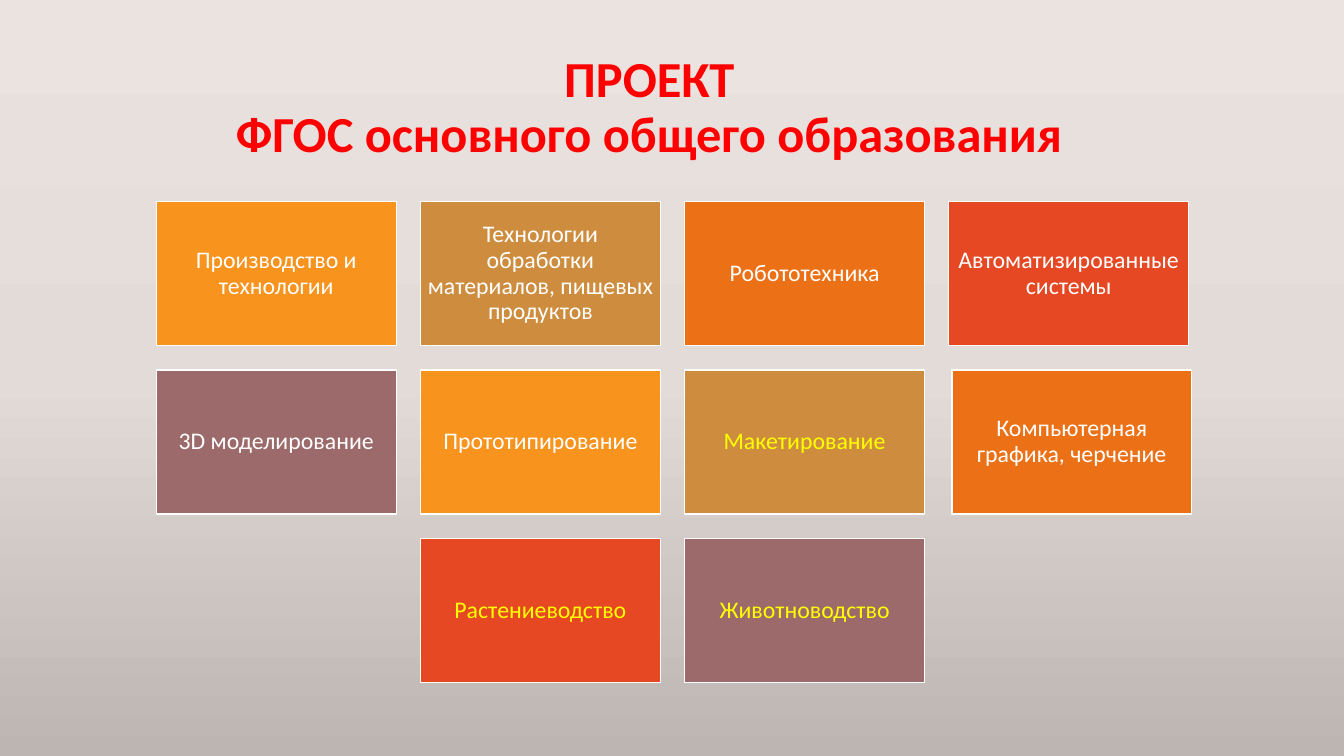
import copy

import pptx
import pptx.dml.color
import pptx.enum.shapes
import pptx.enum.text
import pptx.oxml.ns
import pptx.util

Inches = pptx.util.Inches
RGBColor = pptx.dml.color.RGBColor

WHITE = RGBColor(0xFF, 0xFF, 0xFF)
YELLOW = RGBColor(0xFF, 0xFF, 0x00)
RED = RGBColor(0xFF, 0x00, 0x00)
BACKDROP = [
    (0, RGBColor(0xEB, 0xE3, 0xDF)),
    (0.5, RGBColor(0xE2, 0xDB, 0xD8)),
    (1, RGBColor(0xBC, 0xB5, 0xB2)),
]
TILE_FILLS = [
    RGBColor(0xF8, 0x93, 0x1D),
    RGBColor(0xCE, 0x8D, 0x3E),
    RGBColor(0xEC, 0x70, 0x16),
    RGBColor(0xE6, 0x48, 0x23),
    RGBColor(0x9C, 0x6A, 0x6A),
]

# Subject, column, row, text colour
SUBJECTS = [
    ("Производство и технологии", 0, 0, WHITE),
    ("Технологии обработки материалов, пищевых продуктов", 1, 0, WHITE),
    ("Робототехника", 2, 0, WHITE),
    ("Автоматизированные системы", 3, 0, WHITE),
    ("3D моделирование", 0, 1, WHITE),
    ("Прототипирование", 1, 1, WHITE),
    ("Макетирование", 2, 1, YELLOW),
    ("Компьютерная графика, черчение", 3, 1, WHITE),
    ("Растениеводство", 1, 2, YELLOW),
    ("Животноводство", 2, 2, YELLOW),
]
GRID_LEFT, GRID_TOP = 1.55, 2
TILE_WIDTH, TILE_HEIGHT = 2.38, 1.43
TILE_GAP = 0.24
GRAPHICS_SHIFT = 0.03  # the computer graphics tile stands slightly right


class SubjectSlide:
    font_name = "Calibri"

    def __init__(self, slide):
        self.slide = slide

    def background(self, stops):
        fill = self.slide.background.fill
        fill.gradient()
        fill.gradient_angle = 270
        stop_list = next(self.slide.element.iter(pptx.oxml.ns.qn("a:gsLst")))
        stop_list.append(copy.deepcopy(stop_list[0]))
        for stop, (position, color) in zip(fill.gradient_stops, stops):
            stop.position = position
            stop.color.rgb = color

    def set_text(self, frame, text, size, color, bold=False):
        frame.word_wrap = True
        frame.auto_size = pptx.enum.text.MSO_AUTO_SIZE.NONE
        frame.vertical_anchor = pptx.enum.text.MSO_ANCHOR.MIDDLE
        paragraph = frame.paragraphs[0]
        paragraph.text = text
        paragraph.alignment = pptx.enum.text.PP_ALIGN.CENTER
        paragraph.line_spacing = 0.9
        paragraph.font.name = self.font_name
        paragraph.font.size = pptx.util.Pt(size)
        paragraph.font.bold = bold
        paragraph.font.color.rgb = color

    def title(self, text, left, top, width, height):
        heading = self.slide.shapes.title
        heading.left, heading.top = Inches(left), Inches(top)
        heading.width, heading.height = Inches(width), Inches(height)
        self.set_text(heading.text_frame, text, 36, RED, bold=True)

    def tile(self, text, left, top, fill, color):
        tile = self.slide.shapes.add_shape(
            pptx.enum.shapes.MSO_SHAPE.RECTANGLE,
            Inches(left), Inches(top), Inches(TILE_WIDTH), Inches(TILE_HEIGHT),
        )
        tile.shadow.inherit = False
        tile.fill.solid()
        tile.fill.fore_color.rgb = fill
        tile.line.color.rgb = WHITE
        tile.line.width = pptx.util.Pt(1)
        frame = tile.text_frame
        frame.margin_left = frame.margin_right = Inches(0.07)
        frame.margin_top = frame.margin_bottom = Inches(0.07)
        self.set_text(frame, text, 17, color)


def main():
    presentation = pptx.Presentation()
    presentation.slide_width = Inches(13.33)
    presentation.slide_height = Inches(7.5)
    title_only = presentation.slide_layouts[5]
    page = SubjectSlide(presentation.slides.add_slide(title_only))

    # Background and title
    page.background(BACKDROP)
    page.title("ПРОЕКТ\vФГОС основного общего образования", 0.69, 0.4, 11.5, 1.36)

    # Subject tiles, with the fills taken in turn
    for index, (subject, column, row, color) in enumerate(SUBJECTS):
        left = GRID_LEFT + column * (TILE_WIDTH + TILE_GAP)
        if (column, row) == (3, 1):
            left += GRAPHICS_SHIFT
        top = GRID_TOP + row * (TILE_HEIGHT + TILE_GAP)
        page.tile(subject, left, top, TILE_FILLS[index % len(TILE_FILLS)], color)

    presentation.save("out.pptx")


if __name__ == "__main__":
    main()
